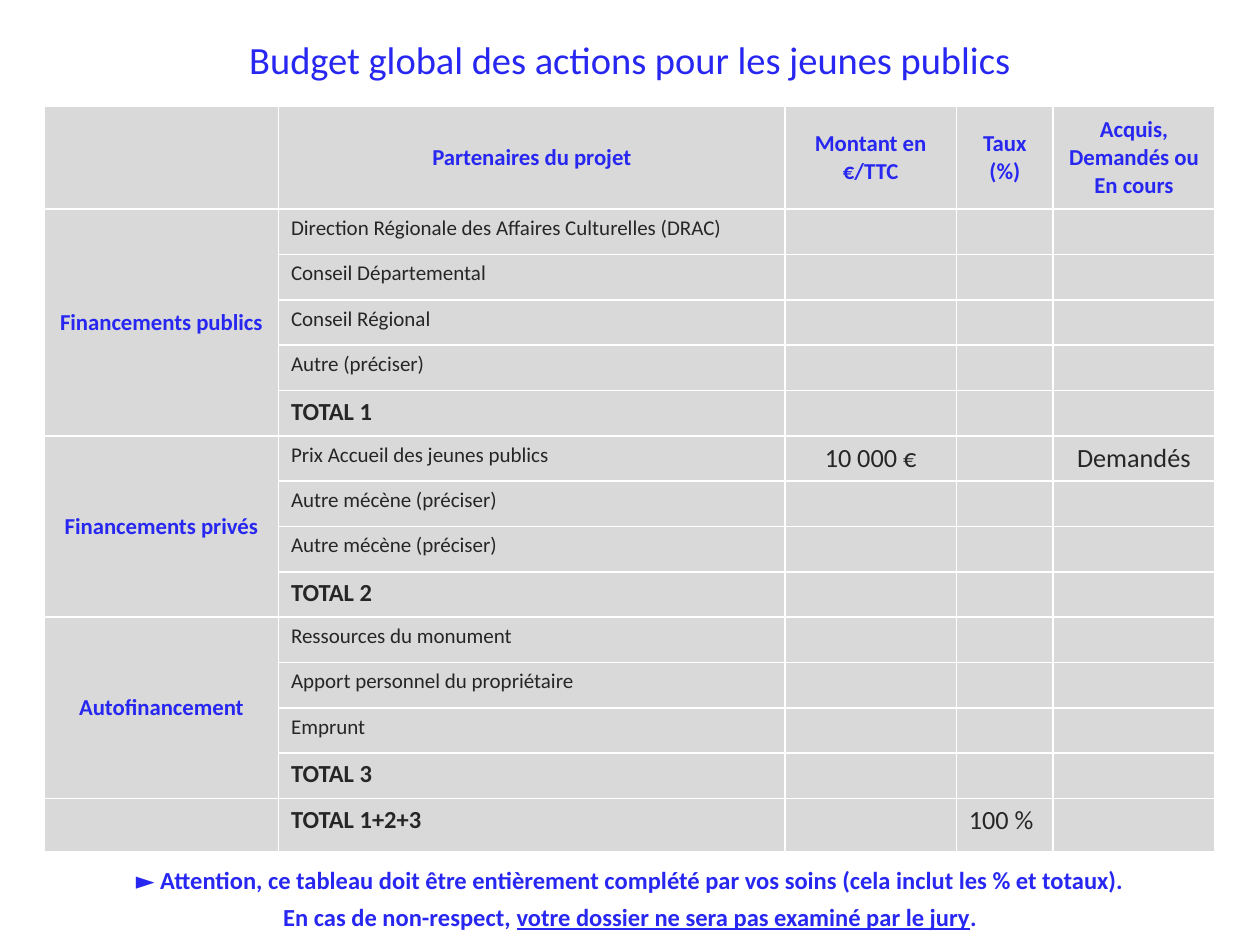
from lxml.etree import SubElement
from pptx import Presentation
from pptx.dml.color import RGBColor
from pptx.enum.text import MSO_ANCHOR, PP_ALIGN
from pptx.oxml.ns import qn
from pptx.util import Inches, Pt

BLUE, DARK, GREY, WHITE = "2727F1", "262626", "D9D9D9", "FFFFFF"
HEAD = dict(size=Pt(13), bold=True, color=BLUE)
ITEM = dict(size=Pt(12), bold=False, color=DARK)
TOTAL = dict(size=Pt(14), bold=True, color=DARK)
VALUE = dict(size=Pt(15), bold=False, color=DARK)
NOTE = dict(size=Pt(14), bold=True, color=BLUE)
TITLE = dict(size=Pt(22), bold=False, color=BLUE)


def paint(code):
    return RGBColor.from_string(code)


class Deck:
    font = "Calibri"

    def __init__(self, wide, high):
        self.prs = Presentation()
        self.prs.slide_width, self.prs.slide_height = Inches(wide), Inches(high)
        self.slide = self.prs.slides.add_slide(self.prs.slide_layouts[6])

    def run(self, para, text, look):
        run = para.add_run()
        run.text = text
        run.font.name = self.font
        for key, val in look.items():
            if key == "color":
                run.font.color.rgb = paint(val)
            else:
                setattr(run.font, key, val)

    def text(self, box, paras, look, anchor=MSO_ANCHOR.TOP, gap=0):
        """Add a centred text box; each paragraph is a list of (text, extra look)."""
        frame = self.slide.shapes.add_textbox(*map(Inches, box)).text_frame
        frame.word_wrap, frame.vertical_anchor = True, anchor
        for num, parts in enumerate(paras):
            para = frame.add_paragraph() if num else frame.paragraphs[0]
            para.alignment, para.space_before = PP_ALIGN.CENTER, Pt(gap)
            for words, extra in parts:
                self.run(para, words, look | extra)

    def table(self, left, top, cols, rows):
        shape = self.slide.shapes.add_table(
            len(rows), len(cols), Inches(left), Inches(top),
            Inches(sum(cols)), Inches(sum(rows)))
        grid = shape.table
        grid.first_row = grid.horz_banding = False
        for col, size in zip(grid.columns, cols):
            col.width = Inches(size)
        for row, size in zip(grid.rows, rows):
            row.height = Inches(size)
        for cell in grid.iter_cells():
            self.frame(cell)
        return grid

    def frame(self, cell):
        # White borders come before the fill in the cell properties
        props = cell._tc.get_or_add_tcPr()
        for side in ("lnL", "lnR", "lnT", "lnB"):
            line = SubElement(props, qn(f"a:{side}"), w=str(Pt(1)))
            fill = SubElement(line, qn("a:solidFill"))
            SubElement(fill, qn("a:srgbClr"), val=WHITE)
        cell.fill.solid()
        cell.fill.fore_color.rgb = paint(GREY)
        # Keep empty cells from stretching their row
        SubElement(cell.text_frame.paragraphs[0]._p, qn("a:endParaRPr"), sz="1200")

    def cell(self, cell, text, look, align=PP_ALIGN.LEFT, anchor=MSO_ANCHOR.TOP):
        cell.vertical_anchor = anchor
        para = cell.text_frame.paragraphs[0]
        para.alignment = align
        self.run(para, text, look)


def main():
    deck = Deck(10, 7.5)
    mid = dict(align=PP_ALIGN.CENTER, anchor=MSO_ANCHOR.MIDDLE)

    # Budget table
    heads = ["Partenaires du projet", "Montant en €/TTC", "Taux (%)",
             "Acquis, Demandés ou En cours"]
    groups = {
        "Financements publics": [
            "Direction Régionale des Affaires Culturelles (DRAC)",
            "Conseil Départemental", "Conseil Régional", "Autre (préciser)"],
        "Financements privés": [
            "Prix Accueil des jeunes publics",
            "Autre mécène (préciser)", "Autre mécène (préciser)"],
        "Autofinancement": [
            "Ressources du monument", "Apport personnel du propriétaire", "Emprunt"],
    }
    count = sum(len(items) + 1 for items in groups.values())
    grid = deck.table(0.35, 0.84, [1.86, 4.02, 1.36, 0.77, 1.28],
                      [0.82] + [0.36] * count + [0.42])
    for col, head in enumerate(heads, 1):
        deck.cell(grid.cell(0, col), head, HEAD, **mid)

    # Groups, each closed by its total
    row = 1
    for num, (name, items) in enumerate(groups.items(), 1):
        last = row + len(items)
        grid.cell(row, 0).merge(grid.cell(last, 0))
        deck.cell(grid.cell(row, 0), name, HEAD, **mid)
        for step, item in enumerate(items):
            deck.cell(grid.cell(row + step, 1), item, ITEM)
        deck.cell(grid.cell(last, 1), f"TOTAL {num}", TOTAL)
        row = last + 1
    deck.cell(grid.cell(row, 1), "TOTAL 1+2+3", TOTAL)

    # Known values
    deck.cell(grid.cell(6, 2), "10 000 €", VALUE, PP_ALIGN.CENTER)
    deck.cell(grid.cell(6, 4), "Demandés", VALUE, PP_ALIGN.CENTER)
    deck.cell(grid.cell(row, 3), "100 %", VALUE)

    # Warning
    deck.text((0.7, 6.82, 8.6, 0.64), [
        [("► Attention, ce tableau doit être entièrement complété par vos soins "
          "(cela inclut les % et totaux).", {})],
        [("En cas de non-respect, ", {}),
         ("votre dossier ne sera pas examiné par le jury", {"underline": True}),
         (".", {})],
    ], NOTE, gap=4)

    # Title
    deck.text((0, 0.04, 10, 0.86),
              [[("Budget global des actions pour les jeunes publics", {})]],
              TITLE, MSO_ANCHOR.MIDDLE)
    deck.prs.save("out.pptx")


if __name__ == "__main__":
    main()
